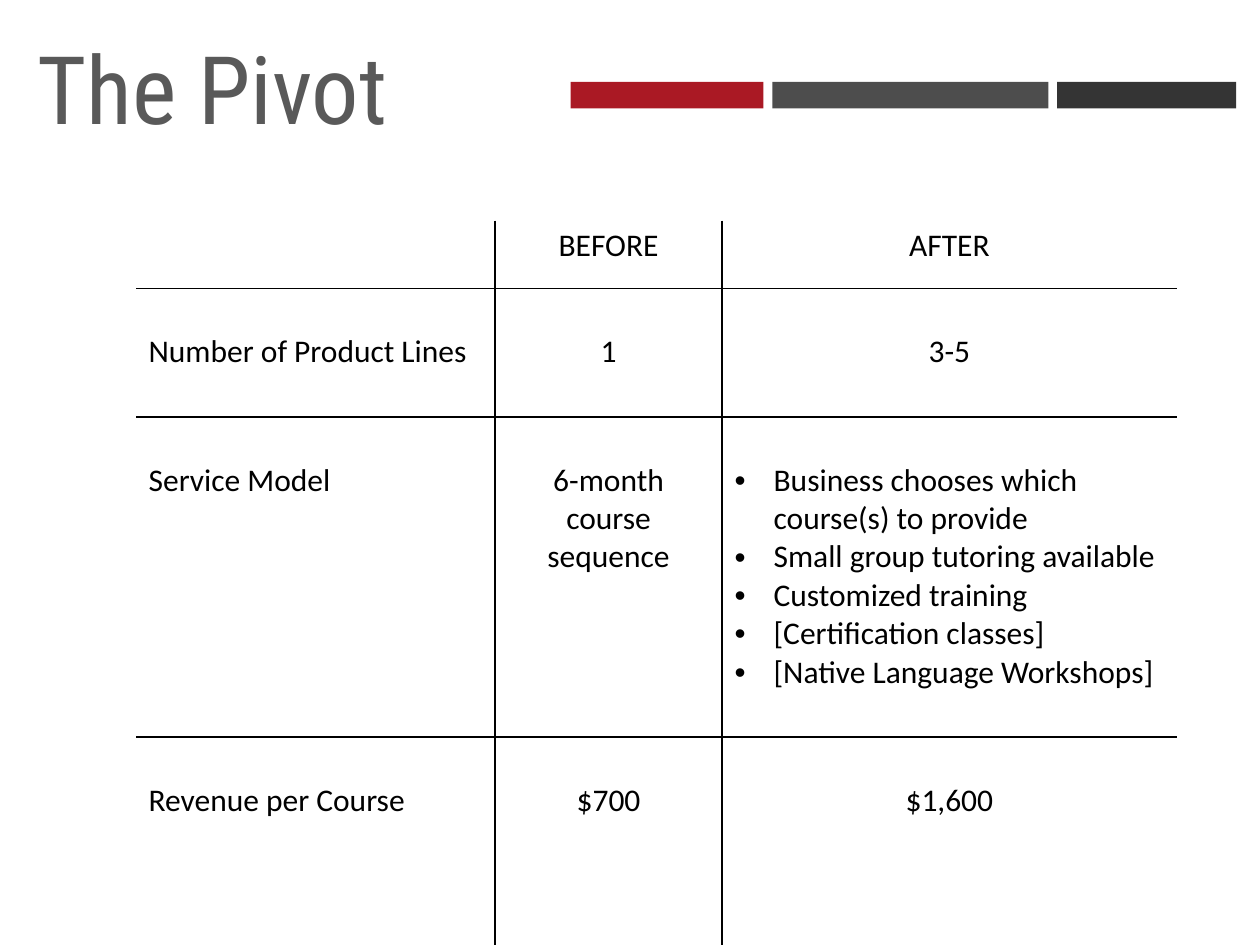
from lxml.etree import SubElement
from pptx import Presentation
from pptx.dml.color import RGBColor
from pptx.enum.shapes import MSO_SHAPE as Shape
from pptx.enum.text import MSO_ANCHOR as Anchor, PP_ALIGN as Align
from pptx.oxml.ns import qn
from pptx.util import Inches, Pt

COLORS = {
    "title": "595959",
    "red": "AA1924",
    "gray": "4D4D4D",
    "dark": "343434",
    "ink": "000000",
}
NO_STYLE = "{2D5ABB26-0587-4C30-8999-92F81FD0307C}"
COLUMN_WIDTHS = [2.85, 1.8, 3.61]
ROW_HEIGHTS = [0.54, 1.02, 2.54, 1.68]
ROWS = [
    ["", "BEFORE", "AFTER"],
    ["Number of Product Lines", "1", "3-5"],
    ["Service Model", "6-month course sequence", [
        "Business chooses which course(s) to provide",
        "Small group tutoring available",
        "Customized training",
        "[Certification classes]",
        "[Native Language Workshops]",
    ]],
    ["Revenue per Course", "$700", "$1,600"],
]


def color(name):
    return RGBColor.from_string(COLORS[name])


def style_font(font, face, size, name):
    font.name = face
    font.size = Pt(size)
    font.color.rgb = color(name)


def add_title(page, left, top, width, height):
    box = page.shapes.add_textbox(Inches(left), Inches(top), Inches(width), Inches(height))
    frame = box.text_frame
    frame.word_wrap = True
    frame.vertical_anchor = Anchor.BOTTOM
    frame.margin_left = frame.margin_right = frame.margin_top = frame.margin_bottom = 0
    frame.text = "The Pivot"
    style_font(frame.paragraphs[0].runs[0].font, "Roboto Condensed", 54, "title")


def add_bars(page, left, top, height, gap):
    for name, width in (("red", 1.53), ("gray", 2.19), ("dark", 1.42)):
        bar = page.shapes.add_shape(
            Shape.RECTANGLE, Inches(left), Inches(top), Inches(width), Inches(height))
        bar.shadow.inherit = False
        bar.fill.solid()
        bar.fill.fore_color.rgb = color(name)
        bar.line.fill.background()
        left += width + gap


def set_borders(cell, sides):
    properties = cell._tc.get_or_add_tcPr()
    for side in sides:
        line = SubElement(properties, qn(f"a:ln{side}"), w=str(Pt(1)))
        fill = SubElement(line, qn("a:solidFill"))
        SubElement(fill, qn("a:srgbClr"), val=COLORS["ink"])


def add_bullet(para):
    properties = para._p.get_or_add_pPr()
    properties.set("marL", str(Inches(0.31)))
    properties.set("indent", str(-Inches(0.31)))
    SubElement(properties, qn("a:buFont"), typeface="Arial")
    SubElement(properties, qn("a:buChar"), char="•")


def fill_cell(cell, content, row, column):
    bulleted = isinstance(content, list)
    cell.text_frame.text = "\n".join(content) if bulleted else content
    if row:
        cell.margin_top = Inches(0.35)
    for para in cell.text_frame.paragraphs:
        para.alignment = Align.LEFT if bulleted or column == 0 else Align.CENTER
        if bulleted:
            add_bullet(para)
        for span in para.runs:
            style_font(span.font, "Calibri", 18, "ink")
    inner = {
        "L": column > 0,
        "R": column < len(COLUMN_WIDTHS) - 1,
        "T": row > 0,
        "B": row < len(ROW_HEIGHTS) - 1,
    }
    set_borders(cell, [side for side, shown in inner.items() if shown])
    cell.fill.background()


def add_comparison(page, left, top):
    frame = page.shapes.add_table(
        len(ROW_HEIGHTS), len(COLUMN_WIDTHS), Inches(left), Inches(top),
        Inches(sum(COLUMN_WIDTHS)), Inches(sum(ROW_HEIGHTS)))
    table = frame.table
    table.first_row = table.horz_banding = False
    table._tbl.tblPr.find(qn("a:tableStyleId")).text = NO_STYLE
    for column, width in zip(table.columns, COLUMN_WIDTHS):
        column.width = Inches(width)
    for row, height in zip(table.rows, ROW_HEIGHTS):
        row.height = Inches(height)
    for row, contents in enumerate(ROWS):
        for column, content in enumerate(contents):
            fill_cell(table.cell(row, column), content, row, column)


def main():
    deck = Presentation()
    deck.slide_width = Inches(10)
    deck.slide_height = Inches(7.5)
    page = deck.slides.add_slide(deck.slide_layouts[6])
    add_title(page, 0.3, 0.35, 3.9, 0.79)
    add_bars(page, 4.53, 0.65, 0.21, 0.07)
    add_comparison(page, 1.08, 1.75)
    deck.save("out.pptx")


if __name__ == "__main__":
    main()
